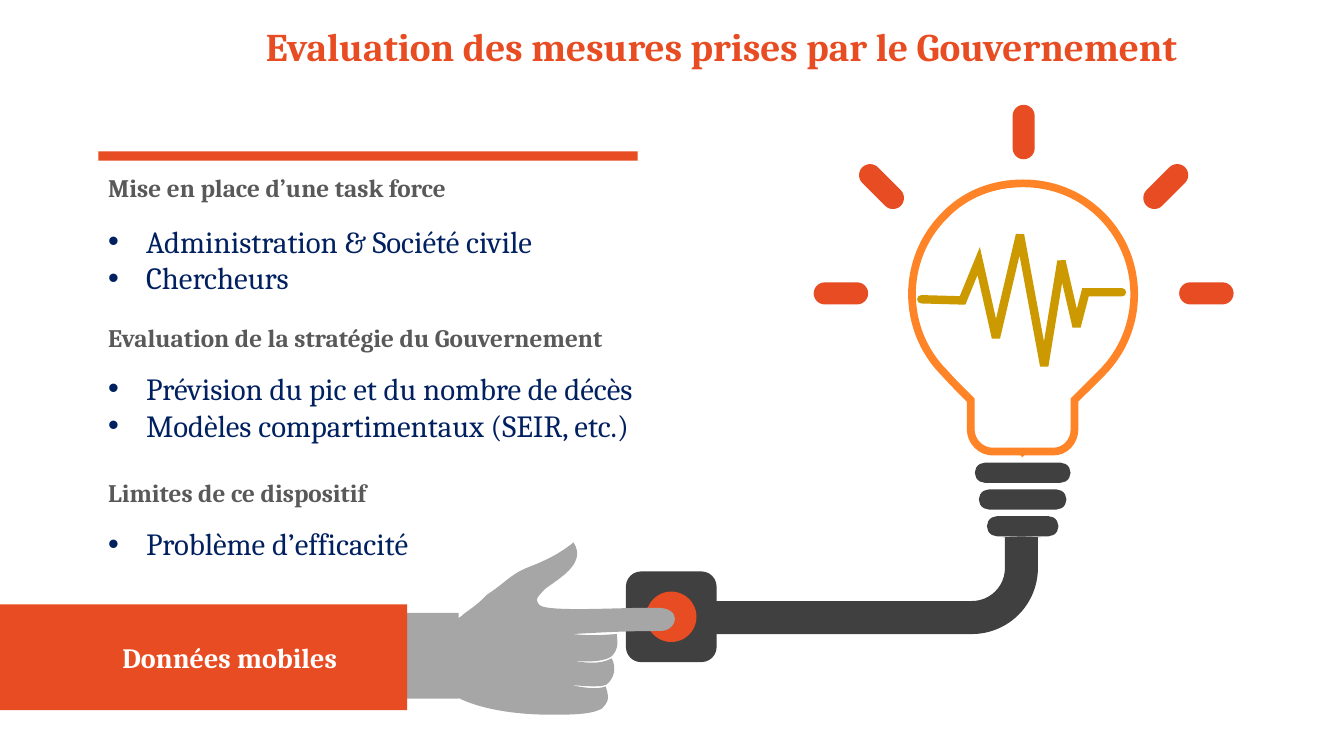
from dataclasses import dataclass

from lxml import etree
from pptx import Presentation
from pptx.dml.color import RGBColor
from pptx.enum.shapes import MSO_SHAPE
from pptx.enum.text import PP_ALIGN
from pptx.oxml.ns import qn
from pptx.util import Pt

RECT = MSO_SHAPE.RECTANGLE
ROUNDED = MSO_SHAPE.ROUNDED_RECTANGLE
OVAL = MSO_SHAPE.OVAL
BENT_ARROW = MSO_SHAPE.BENT_ARROW
LEFT, CENTER = PP_ALIGN.LEFT, PP_ALIGN.CENTER


@dataclass(frozen=True)
class Theme:
    font: str = "Cambria"
    orange: str = "E84C22"
    glow: str = "FF8427"
    gold: str = "CC9900"
    dark: str = "404040"
    skin: str = "A6A6A6"
    navy: str = "002060"
    heading: str = "595959"
    white: str = "FFFFFF"
    title_size: int = 28
    bullet_size: int = 22
    label_size: int = 20
    heading_size: int = 18


THEME = Theme()
TEXT_LEFT = 70.2
BULLET_INDENT = 27
BULB_AXIS = 730.5
GRID = 100  # outline units per point

# Heading, heading top, heading width, bullets, bullets top, bullets width
SECTIONS = [
    ("Mise en place d’une task force", 119.5, 374.4,
     ["Administration & Société civile", "Chercheurs"], 155.2, 374.4),
    ("Evaluation de la stratégie du Gouvernement", 226.8, 396,
     ["Prévision du pic et du nombre de décès",
      "Modèles compartimentaux (SEIR, etc.)"], 260.6, 433.4),
    ("Limites de ce dispositif", 337.7, 374.4,
     ["Problème d’efficacité"], 371.5, 391.7),
]

# Outlines: the first pair is the start, two numbers a line, six a Bézier curve
BULB = [
    (730.8, 131), (751, 131, 771.1, 138.2, 787, 154.1),
    (817.9, 185, 817.9, 235.4, 787, 266.4), (767.5, 285.8), (767.5, 306.7),
    (767.5, 315.4, 761, 322.6, 752.4, 322.6),
    (730.8, 322.6), (730.4, 322.9), (730.1, 322.6), (709.2, 322.6),
    (700.6, 322.6, 693.4, 315.4, 693.4, 306.7), (693.4, 285.8),
    (686.9, 279.4, 680.4, 272.9, 674.6, 266.4),
    (643.7, 235.4, 643.7, 185, 674.6, 154.1),
    (689.8, 138.2, 709.9, 131, 730.8, 131),
]
PULSE = [
    (658.1, 213.8), (687.6, 214.6), (699.1, 186.5), (711.4, 241.2),
    (728.6, 167.8), (745.9, 261.4), (758.2, 186.5), (769, 233.3),
    (775.4, 208.8), (801.4, 208.8),
]
HAND = [
    (409.7, 387.4), (397.4, 397.4, 385.9, 401.8, 375.1, 406.1),
    (365, 410.4, 360, 416.9, 347.8, 424.8),
    (339.8, 433.4, 333.4, 436.3, 329.8, 439.9),
    (322.6, 445.7, 319.7, 442.1, 311, 442.1), (311, 496.1),
    (316.1, 494.6, 317.5, 493.2, 325.4, 497.5),
    (349.9, 510.5, 386.6, 510.5, 395.3, 510.5),
    (412.6, 510.5, 423.4, 509.8, 429.8, 506.2),
    (435.6, 500.4, 434.9, 498.2, 432.7, 490.3),
    (424.8, 493.2, 414.7, 490.3, 408.2, 489.6),
    (408.2, 488.9, 428.4, 491.8, 433.4, 488.9),
    (438.5, 484.6, 440.6, 477.4, 437, 470.2),
    (427.7, 475.2, 417.6, 473, 410.4, 472.3),
    (410.4, 471.6, 429.1, 474.5, 437, 468.7),
    (441.4, 463.7, 441.4, 461.5, 440.6, 452.9),
    (429.1, 453.6, 422.6, 454.3, 409, 452.9),
    (445.7, 450.7, 459.4, 450.7, 472.3, 450.7),
    (484.6, 450, 487.4, 433.4, 468.7, 434.2),
    (451.4, 433.4, 390.2, 437.8, 385.2, 432),
    (382.3, 427.7, 383, 427.7, 388.8, 421.2),
    (397.4, 414, 419.8, 403.2, 409.7, 387.4),
]


def paint(shape, fill=None, line=None, weight=0):
    shape.shadow.inherit = False
    if fill:
        shape.fill.solid()
        shape.fill.fore_color.rgb = RGBColor.from_string(fill)
    else:
        shape.fill.background()
    if line:
        shape.line.color.rgb = RGBColor.from_string(line)
        shape.line.width = Pt(weight)
    else:
        shape.line.fill.background()


def add_block(canvas, kind, left, top, width, height, fill, adjust=(), turn=0):
    block = canvas.add_shape(kind, Pt(left), Pt(top), Pt(width), Pt(height))
    for index, value in enumerate(adjust):
        block.adjustments[index] = value
    block.rotation = turn
    paint(block, fill)
    return block


def add_outline(canvas, outline, closed=True, **paints):
    points = [(round(step[i] * GRID), round(step[i + 1] * GRID))
              for step in outline for i in range(0, len(step), 2)]
    builder = canvas.build_freeform(*points[0], scale=Pt(1) / GRID)
    builder.add_line_segments(points[1:], close=closed)
    shape = builder.convert_to_shape()
    # Merge each run of three segments that describes one curve
    segments = iter(list(shape._element.iter(qn("a:lnTo"))))
    for step in outline[1:]:
        first = next(segments)
        if len(step) == 6:
            first.tag = qn("a:cubicBezTo")
            for _ in range(2):
                extra = next(segments)
                first.append(extra[0])
                extra.getparent().remove(extra)
    paint(shape, **paints)
    return shape


def sharpen(shape, cap="flat"):
    stroke = shape.line._get_or_add_ln()
    stroke.set("cap", cap)
    etree.SubElement(stroke, qn("a:miter")).set("lim", "800000")


def add_text(page, lines, left, top, width, height, size, color,
             bold=False, align=LEFT, bullets=False):
    box = page.shapes.add_textbox(Pt(left), Pt(top), Pt(width), Pt(height))
    frame = box.text_frame
    frame.word_wrap = True
    for index, line in enumerate(lines):
        para = frame.paragraphs[0] if index == 0 else frame.add_paragraph()
        para.text = line
        para.alignment = align
        if bullets:
            props = para._p.get_or_add_pPr()
            props.set("marL", str(Pt(BULLET_INDENT)))
            props.set("indent", str(-Pt(BULLET_INDENT)))
            etree.SubElement(props, qn("a:buFont")).set("typeface", "Arial")
            etree.SubElement(props, qn("a:buChar")).set("char", "•")
        para.font.name = THEME.font
        para.font.size = Pt(size)
        para.font.bold = bold
        para.font.color.rgb = RGBColor.from_string(color)


def add_lamp(page):
    lamp = page.shapes.add_group_shape().shapes
    # Switch and cable
    add_block(lamp, ROUNDED, 447.1, 408.2, 64.8, 64.8, THEME.dark)
    add_block(lamp, OVAL, 461.5, 422.6, 36, 36, THEME.orange)
    cable = add_block(lamp, BENT_ARROW, 589, 298.1, 69.8, 239.8, THEME.dark,
                      (0.338, 0.203, 0.007, 0.676), 90)
    cable._element.spPr.xfrm.set("flipH", "1")
    # Bulb and its screw base
    sharpen(add_outline(lamp, BULB, line=THEME.glow, weight=5.5))
    for index, width in enumerate((68.4, 62.6, 51.1)):
        add_block(lamp, ROUNDED, BULB_AXIS - width / 2, 330.5 + 19.1 * index,
                  width, 14.4, THEME.dark, (0.5,))
    # Rays, mirrored about the bulb axis
    for offset, middle, turn in ((0, 94.3, 0), (101.5, 133.2, 45), (-101.5, 133.2, -45),
                                 (130.5, 209.5, 90), (-130.5, 209.5, -90)):
        add_block(lamp, ROUNDED, BULB_AXIS + offset - 7.2, middle - 19.4,
                  15.8, 38.9, THEME.orange, (0.5,), turn)
    # Pulse with round ends and sharp corners
    sharpen(add_outline(lamp, PULSE, closed=False, line=THEME.gold, weight=6), "rnd")


def add_sections(page):
    for heading, top, width, bullets, bullets_top, bullets_width in SECTIONS:
        add_text(page, [heading], TEXT_LEFT, top, width, 28.8,
                 THEME.heading_size, THEME.heading, bold=True)
        add_text(page, bullets, TEXT_LEFT, bullets_top, bullets_width,
                 7.2 + 26.6 * len(bullets), THEME.bullet_size, THEME.navy, bullets=True)


def add_arm(page):
    arm = page.shapes.add_group_shape().shapes
    add_outline(arm, HAND, fill=THEME.skin)
    add_block(arm, RECT, 290.2, 437.8, 37.4, 61.2, THEME.skin)
    add_block(page.shapes, RECT, 0, 431.7, 290.9, 75.6, THEME.orange)
    add_text(page, ["Données mobiles"], 72, 454, 184.3, 31.7,
             THEME.label_size, THEME.white, bold=True, align=CENTER)


def main():
    deck = Presentation()
    deck.slide_width, deck.slide_height = Pt(960), Pt(540)
    page = deck.slides.add_slide(deck.slide_layouts[6])
    add_lamp(page)
    add_block(page.shapes, RECT, TEXT_LEFT, 108.2, 385.2, 6.5, THEME.orange)
    add_sections(page)
    add_arm(page)
    add_text(page, ["Evaluation des mesures prises par le Gouvernement"],
             182.9, 12.2, 669.6, 64.1, THEME.title_size, THEME.orange, bold=True)
    deck.save("out.pptx")


if __name__ == "__main__":
    main()
